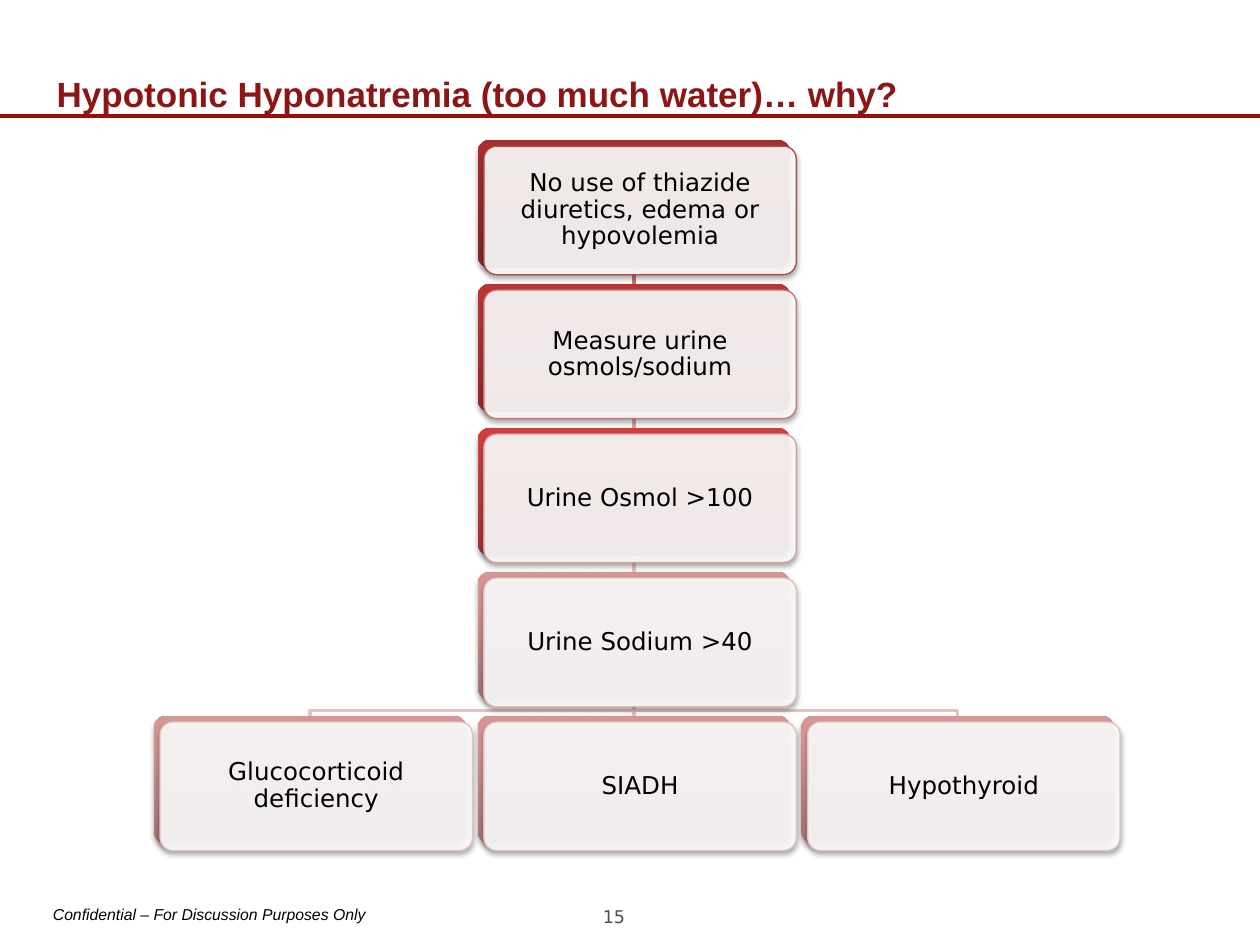
"""Build the hypotonic hyponatremia decision slide."""
from lxml import etree
from pptx import Presentation
from pptx import util as u
from pptx.dml.color import RGBColor
from pptx.enum import shapes, text
from pptx.oxml import parse_xml
from pptx.oxml.ns import nsdecls, qn

BLACK = RGBColor(0x00, 0x00, 0x00)
WHITE = RGBColor(0xFF, 0xFF, 0xFF)
CARDINAL = RGBColor(0x8C, 0x15, 0x15)
RULE_RED = RGBColor(0x98, 0x0F, 0x08)
NUMBER_GREY = RGBColor(0x51, 0x4F, 0x45)

LEVELS = [
    {"steps": ["No use of thiazide diuretics, edema or hypovolemia"],
     "stops": ("7D2624", "A2312E", "A52F2C"), "edge": RGBColor(0xAE, 0x49, 0x46)},
    {"steps": ["Measure urine osmols/sodium"],
     "stops": ("8E2B28", "B83835", "BB3632"), "edge": RGBColor(0xC7, 0x74, 0x72)},
    {"steps": ["Urine Osmol >100"],
     "stops": ("9C3331", "CB433F", "CF403D"), "edge": RGBColor(0xD5, 0xA1, 0xA0)},
    {"steps": ["Urine Sodium >40"],
     "stops": ("A57372", "D79594", "D99493"), "edge": RGBColor(0xE2, 0xC2, 0xC2)},
    {"steps": ["Glucocorticoid deficiency", "SIADH", "Hypothyroid"],
     "stops": ("A57372", "D79594", "D99493"), "edge": RGBColor(0xE2, 0xC2, 0xC2)},
]
LABELS = [
    {"words": "Confidential – For Discussion Purposes Only", "at": (0.42, 7.18, 2.5, 0.15),
     "frame": {"word_wrap": False}, "para": {},
     "font": {"name": "Arial", "size": u.Pt(9), "italic": True}, "colour": BLACK},
    {"words": "Hypotonic Hyponatremia (too much water)… why?", "at": (0.45, 0.33, 9.16, 0.58),
     "frame": {"word_wrap": True, "vertical_anchor": text.MSO_ANCHOR.BOTTOM},
     "para": {"line_spacing": 1.05},
     "font": {"name": "Arial", "size": u.Pt(20), "bold": True}, "colour": CARDINAL},
    {"words": "15 ", "at": (4.33, 7.19, 1.13, 0.19),
     "frame": {"word_wrap": True}, "para": {"alignment": text.PP_ALIGN.CENTER},
     "font": {"name": "DejaVu Sans", "size": u.Pt(10)}, "colour": NUMBER_GREY},
]
STEP_STYLE = {
    "frame": {"word_wrap": True, "vertical_anchor": text.MSO_ANCHOR.MIDDLE},
    "para": {"alignment": text.PP_ALIGN.CENTER, "line_spacing": 0.9},
    "font": {"name": "DejaVu Sans", "size": u.Pt(14)}, "colour": BLACK,
}

SLIDE_W, SLIDE_H = 10, 7.5
RULE_Y = 0.92
BOX_W, BOX_H = 2.48, 1.02
CENTRE_X, COLUMN_PITCH = 5.03, 2.57
FIRST_TOP, LAST_TOP = 1.11, 5.68
ROW_PITCH = (LAST_TOP - FIRST_TOP) / (len(LEVELS) - 1)
CARD_SHIFT = 0.05
BRANCH_Y = 5.64


def set_all(target, values):
    for name, value in values.items():
        setattr(target, name, value)


def write(shape, words, style, inset=0):
    frame = shape.text_frame
    sides = ("margin_left", "margin_top", "margin_right", "margin_bottom")
    set_all(frame, {side: u.Inches(inset) for side in sides})
    set_all(frame, style["frame"])
    para = frame.paragraphs[0]
    set_all(para, style["para"])
    span = para.add_run()
    span.text = words
    set_all(span.font, style["font"])
    span.font.color.rgb = style["colour"]


def add_box(page, left, top):
    box = page.shapes.add_shape(shapes.MSO_SHAPE.ROUNDED_RECTANGLE,
                                *map(u.Inches, (left, top, BOX_W, BOX_H)))
    box.adjustments[0] = 0.1
    box.shadow.inherit = False
    shadow = etree.SubElement(box._element.spPr.find(qn("a:effectLst")), qn("a:outerShdw"),
                              blurRad=str(u.Pt(3.1)), dist=str(u.Pt(1.8)),
                              dir="5400000", rotWithShape="0")
    tint = etree.SubElement(shadow, qn("a:srgbClr"), val="000000")
    etree.SubElement(tint, qn("a:alpha"), val="35000")
    return box


def add_back(page, left, top, stops):
    back = add_box(page, left, top)
    back.line.fill.background()
    back.fill.gradient()
    back.fill.gradient_angle = 90
    stop_list = back._element.spPr.find(qn("a:gradFill")).find(qn("a:gsLst"))
    for old in list(stop_list):
        stop_list.remove(old)
    for place, colour in zip((0, 80, 100), stops):
        stop_list.append(parse_xml(f'<a:gs {nsdecls("a")} pos="{place * 1000}">'
                                   f'<a:srgbClr val="{colour}"/></a:gs>'))
    return back


def add_card(page, left, top, words, edge):
    card = add_box(page, left + CARD_SHIFT, top + CARD_SHIFT)
    card.fill.solid()
    card.fill.fore_color.rgb = WHITE
    solid = card._element.spPr.find(qn("a:solidFill"))
    etree.SubElement(solid[0], qn("a:alpha"), val="90000")
    card.line.color.rgb = edge
    card.line.width = u.Pt(0.75)
    write(card, words, STEP_STYLE, 0.09)


def add_line(page, ends, colour, width):
    line = page.shapes.add_connector(shapes.MSO_CONNECTOR.STRAIGHT, *map(u.Inches, ends))
    etree.SubElement(line._element.spPr, qn("a:effectLst"))
    line.line.color.rgb = colour
    line.line.width = u.Pt(width)
    return line


def add_branch(page, x, colour):
    points = [(CENTRE_X, LAST_TOP - ROW_PITCH + BOX_H), (CENTRE_X, BRANCH_Y),
              (x, BRANCH_Y), (x, LAST_TOP)]
    start, *rest = [tuple(map(u.Inches, point)) for point in points]
    builder = page.shapes.build_freeform(*start)
    builder.add_line_segments(rest, close=False)
    branch = builder.convert_to_shape()
    branch.shadow.inherit = False
    branch.fill.background()
    branch.line.color.rgb = colour
    branch.line.width = u.Pt(2)


def main():
    deck = Presentation()
    deck.slide_width, deck.slide_height = u.Inches(SLIDE_W), u.Inches(SLIDE_H)
    page = deck.slides.add_slide(deck.slide_layouts[6])
    add_line(page, (0, RULE_Y, SLIDE_W, RULE_Y), RULE_RED, 2.25)
    for label in LABELS:
        write(page.shapes.add_textbox(*map(u.Inches, label["at"])), label["words"], label)

    cards, parent = [], None
    for row, level in enumerate(LEVELS):
        top = FIRST_TOP + row * ROW_PITCH
        middle = (len(level["steps"]) - 1) / 2
        for column, words in enumerate(level["steps"]):
            x = CENTRE_X + (column - middle) * COLUMN_PITCH
            left = x - BOX_W / 2
            back = add_back(page, left, top, level["stops"])
            cards.append((left, top, words, level["edge"]))
            if column != middle:
                add_branch(page, x, level["edge"])
                continue
            if parent:
                link = add_line(page, (x, top, x, top), level["edge"], 2)
                link.begin_connect(parent, 2)
                link.end_connect(back, 0)
            parent = back
    for card in cards:
        add_card(page, *card)
    deck.save("out.pptx")


if __name__ == "__main__":
    main()
